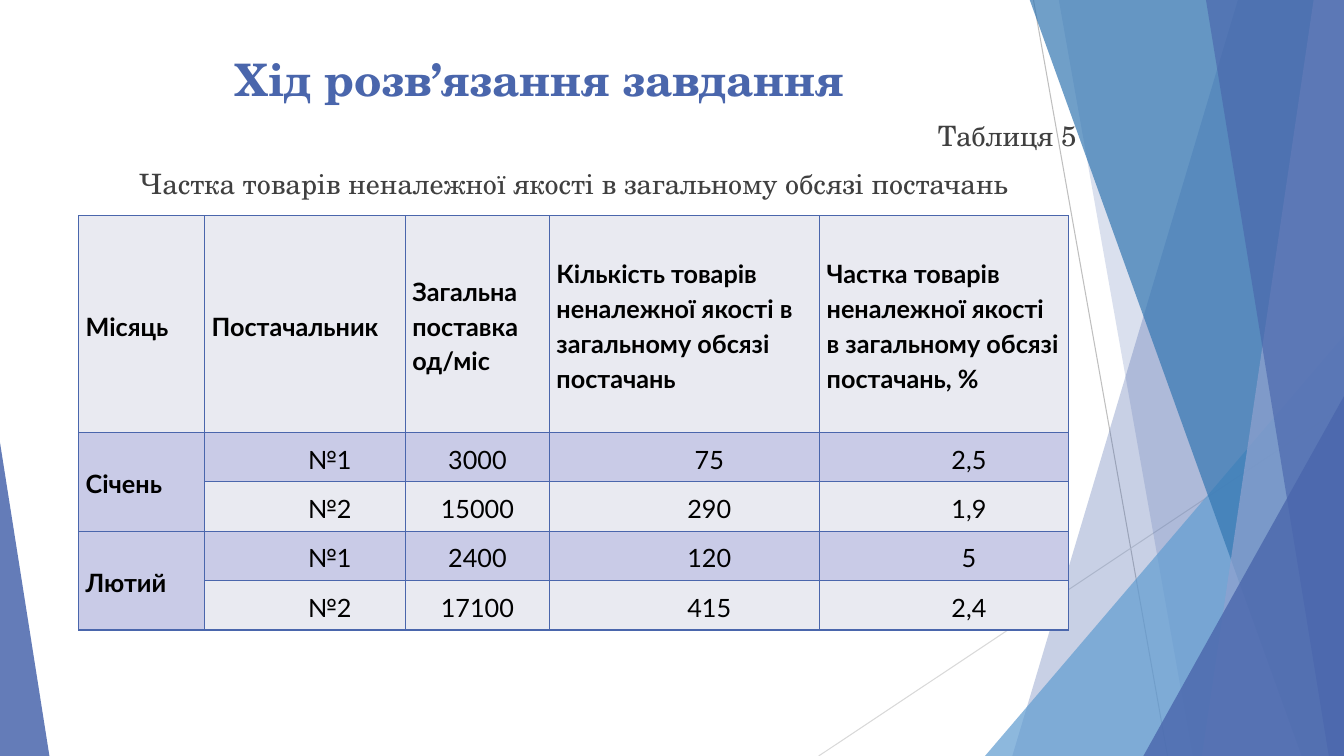
"""Build the slide with the table of substandard goods by supplier."""
from lxml.etree import SubElement
from pptx import Presentation
from pptx.dml.color import RGBColor
from pptx.enum.shapes import MSO_CONNECTOR, MSO_SHAPE
from pptx.enum.text import MSO_ANCHOR, MSO_AUTO_SIZE, PP_ALIGN
from pptx.oxml.ns import qn
from pptx.util import Inches, Pt

BLUE = RGBColor(0x4A, 0x66, 0xAC)
SKY = RGBColor(0x62, 0x9D, 0xD1)
OCEAN = RGBColor(0x34, 0x77, 0xB2)
LAVENDER = RGBColor(0x90, 0xA2, 0xCF)
GRAY = RGBColor(0x40, 0x40, 0x40)
BLACK = RGBColor(0, 0, 0)
LIGHT_ROW = RGBColor(0xE9, 0xEA, 0xF1)
DARK_ROW = RGBColor(0xC9, 0xCB, 0xE7)
HEADING_FONT, TABLE_FONT = "TeX Gyre Schola", "Lato"
WIDTH, HEIGHT = 13.33, 7.5

TITLE = "Хід розв’язання завдання"
CAPTION = [
    ("Таблиця 5", PP_ALIGN.RIGHT),
    ("Частка товарів неналежної якості в загальному обсязі постачань", PP_ALIGN.CENTER),
]
ROWS = [
    ("Місяць", "Постачальник", "Загальна поставка од/міс",
     "Кількість товарів неналежної якості в загальному обсязі постачань",
     "Частка товарів неналежної якості в загальному обсязі постачань, %"),
    ("Січень", "№1", "3000", "75", "2,5"),
    ("", "№2", "15000", "290", "1,9"),
    ("Лютий", "№1", "2400", "120", "5"),
    ("", "№2", "17100", "415", "2,4"),
]
COLUMN_WIDTHS = [1.25, 1.99, 1.43, 2.68, 2.47]
ROW_HEIGHTS = [2.15] + [0.49] * 4
TOTAL_COLUMN = 2

RAYS = [
    ((10.25, 0), (11.58, HEIGHT), RGBColor(0xBF, 0xBF, 0xBF)),
    ((WIDTH, 4.03), (8.12, HEIGHT), RGBColor(0xD9, 0xD9, 0xD9)),
]
BACK_BANDS = [(12.28, 10.04, BLUE, 30), (10.5, 11.83, BLUE, 20)]
FRONT_BANDS = [
    (10.21, 12.91, OCEAN, 70),
    (13.03, 11.92, LAVENDER, 70),
    (11.96, 13.18, BLUE, 65),
]
SKY_CORNER = (9.77, 3.33, 3.56, 4.17, 1, SKY, 72)
BLUE_CORNERS = [
    (11.34, 3.93, 1.99, 3.57, 1, BLUE, 80),
    (0, 4.39, 0.49, 3.11, 0, BLUE, 85),
]


def paint(facet, color, opacity):
    facet.shadow.inherit = False
    facet.fill.solid()
    facet.fill.fore_color.rgb = color
    facet.line.fill.background()
    tint = facet.fill._xPr.find(".//" + qn("a:srgbClr"))
    SubElement(tint, qn("a:alpha"), val=str(opacity * 1000))


def add_ray(shapes, start, end, color):
    ray = shapes.add_connector(MSO_CONNECTOR.STRAIGHT, *map(Inches, start + end))
    ray.line.color.rgb = color
    ray.line.width = Pt(0.75)
    SubElement(ray._element.spPr, qn("a:effectLst"))


def add_band(shapes, top_x, bottom_x, color, opacity):
    outline = shapes.build_freeform(Inches(top_x), Inches(-0.01))
    corners = [(WIDTH, -0.01), (WIDTH, HEIGHT), (bottom_x, HEIGHT)]
    outline.add_line_segments([(Inches(x), Inches(y)) for x, y in corners])
    paint(outline.convert_to_shape(), color, opacity)


def add_corner(shapes, left, top, width, height, apex, color, opacity):
    box = map(Inches, (left, top, width, height))
    corner = shapes.add_shape(MSO_SHAPE.ISOSCELES_TRIANGLE, *box)
    corner.adjustments[0] = apex
    paint(corner, color, opacity)


def add_decoration(shapes):
    for ray in RAYS:
        add_ray(shapes, *ray)
    for band in BACK_BANDS:
        add_band(shapes, *band)
    add_corner(shapes, *SKY_CORNER)
    for band in FRONT_BANDS:
        add_band(shapes, *band)
    for corner in BLUE_CORNERS:
        add_corner(shapes, *corner)


def style(paragraph, font_name, size, color, bold, alignment):
    paragraph.alignment = alignment
    for run in paragraph.runs:
        font = run.font
        font.name, font.size, font.bold = font_name, Pt(size), bold
        font.color.rgb = color


def place(holder, left, top, width, height, anchor):
    holder.left, holder.top = Inches(left), Inches(top)
    holder.width, holder.height = Inches(width), Inches(height)
    frame = holder.text_frame
    frame.word_wrap = True
    frame.auto_size = MSO_AUTO_SIZE.NONE
    frame.vertical_anchor = anchor
    holder._element.getparent().append(holder._element)
    return frame


def fill_placeholders(title, body):
    heading = place(title, 2.24, 0.44, 6.58, 0.67, MSO_ANCHOR.MIDDLE)
    heading.text = TITLE
    style(heading.paragraphs[0], HEADING_FONT, 32, BLUE, True, PP_ALIGN.LEFT)
    caption = place(body, 0.6, 1.13, 10.18, 6.37, MSO_ANCHOR.TOP)
    caption.text = "\n".join(line for line, _ in CAPTION)
    for paragraph, (_, alignment) in zip(caption.paragraphs, CAPTION):
        style(paragraph, HEADING_FONT, 20, GRAY, False, alignment)
        paragraph.space_before = Pt(10)
        properties = paragraph._p.get_or_add_pPr()
        properties.set("marL", "0")
        properties.set("indent", "0")
        SubElement(properties, qn("a:buNone"))


def format_cell(cell, row, column):
    properties = cell._tc.get_or_add_tcPr()
    for side in ("lnL", "lnR", "lnT", "lnB"):
        border = SubElement(properties, qn("a:" + side), w=str(Pt(1)))
        SubElement(SubElement(border, qn("a:solidFill")), qn("a:srgbClr"), val=str(BLUE))
    month = row > 0 and column == 0
    cell.fill.solid()
    cell.fill.fore_color.rgb = DARK_ROW if month or row % 2 else LIGHT_ROW
    cell.vertical_anchor = MSO_ANCHOR.MIDDLE
    cell.margin_left = cell.margin_right = Inches(0.07)
    cell.margin_top = cell.margin_bottom = 0
    label = row == 0 or column == 0
    paragraph = cell.text_frame.paragraphs[0]
    alignment = PP_ALIGN.LEFT if label else PP_ALIGN.CENTER
    style(paragraph, TABLE_FONT, 18, BLACK, label, alignment)
    paragraph.line_spacing = 1.15
    if not label and column != TOTAL_COLUMN:
        paragraph._p.get_or_add_pPr().set("indent", str(Inches(0.49)))


def add_supply_table(shapes):
    size = sum(COLUMN_WIDTHS), sum(ROW_HEIGHTS)
    table = shapes.add_table(len(ROWS), len(COLUMN_WIDTHS),
                             *map(Inches, (0.78, 2.14, *size))).table
    for column, width in zip(table.columns, COLUMN_WIDTHS):
        column.width = Inches(width)
    for row, height in zip(table.rows, ROW_HEIGHTS):
        row.height = Inches(height)
    for r, values in enumerate(ROWS):
        for c, value in enumerate(values):
            cell = table.cell(r, c)
            cell.text_frame.text = value
            format_cell(cell, r, c)
    for first in range(1, len(ROWS), 2):
        table.cell(first, 0).merge(table.cell(first + 1, 0))


def main():
    deck = Presentation()
    deck.slide_width, deck.slide_height = Inches(WIDTH), Inches(HEIGHT)
    slide = deck.slides.add_slide(deck.slide_layouts[1])
    add_decoration(slide.shapes)
    fill_placeholders(slide.shapes.title, slide.placeholders[1])
    add_supply_table(slide.shapes)
    deck.save("out.pptx")


if __name__ == "__main__":
    main()
